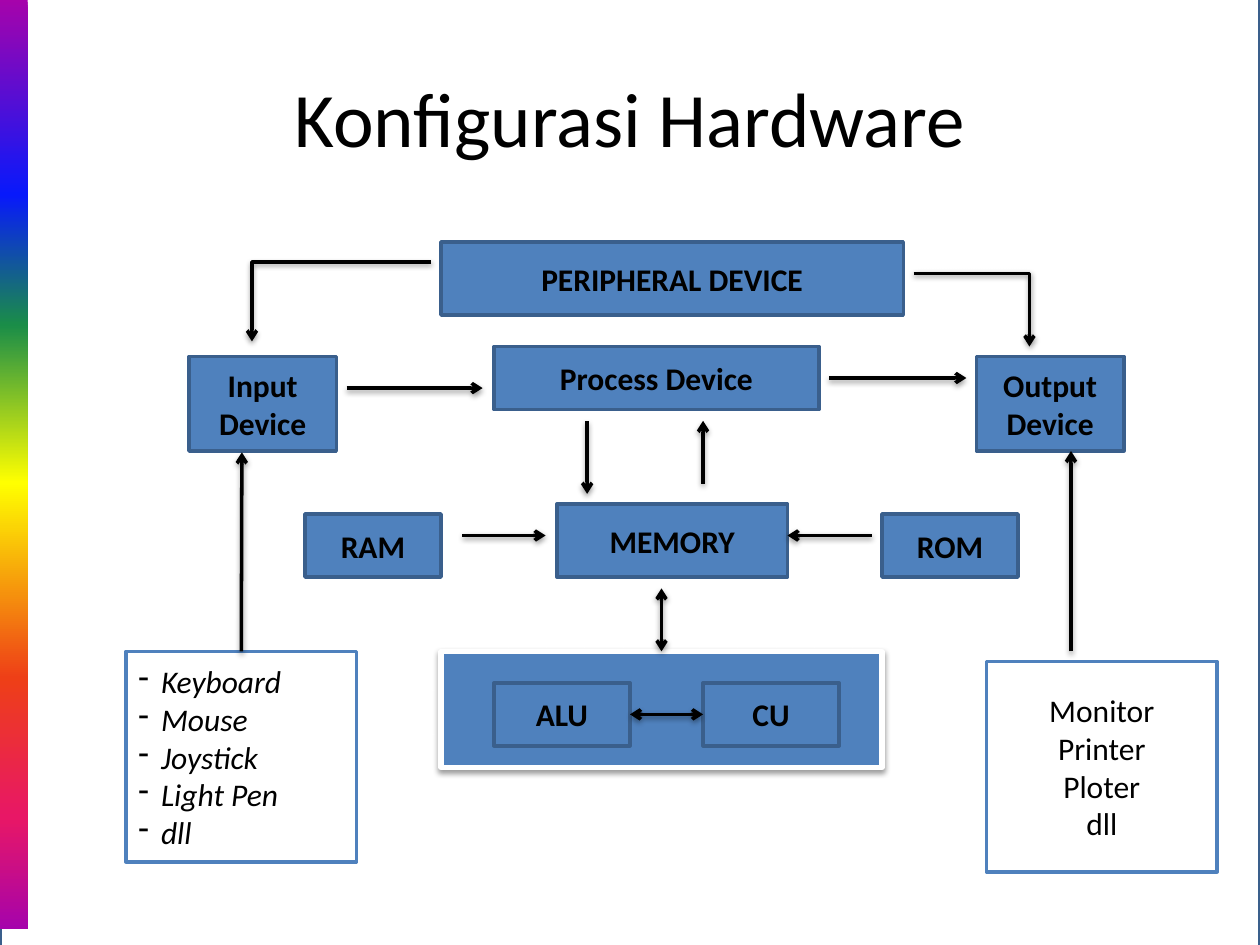
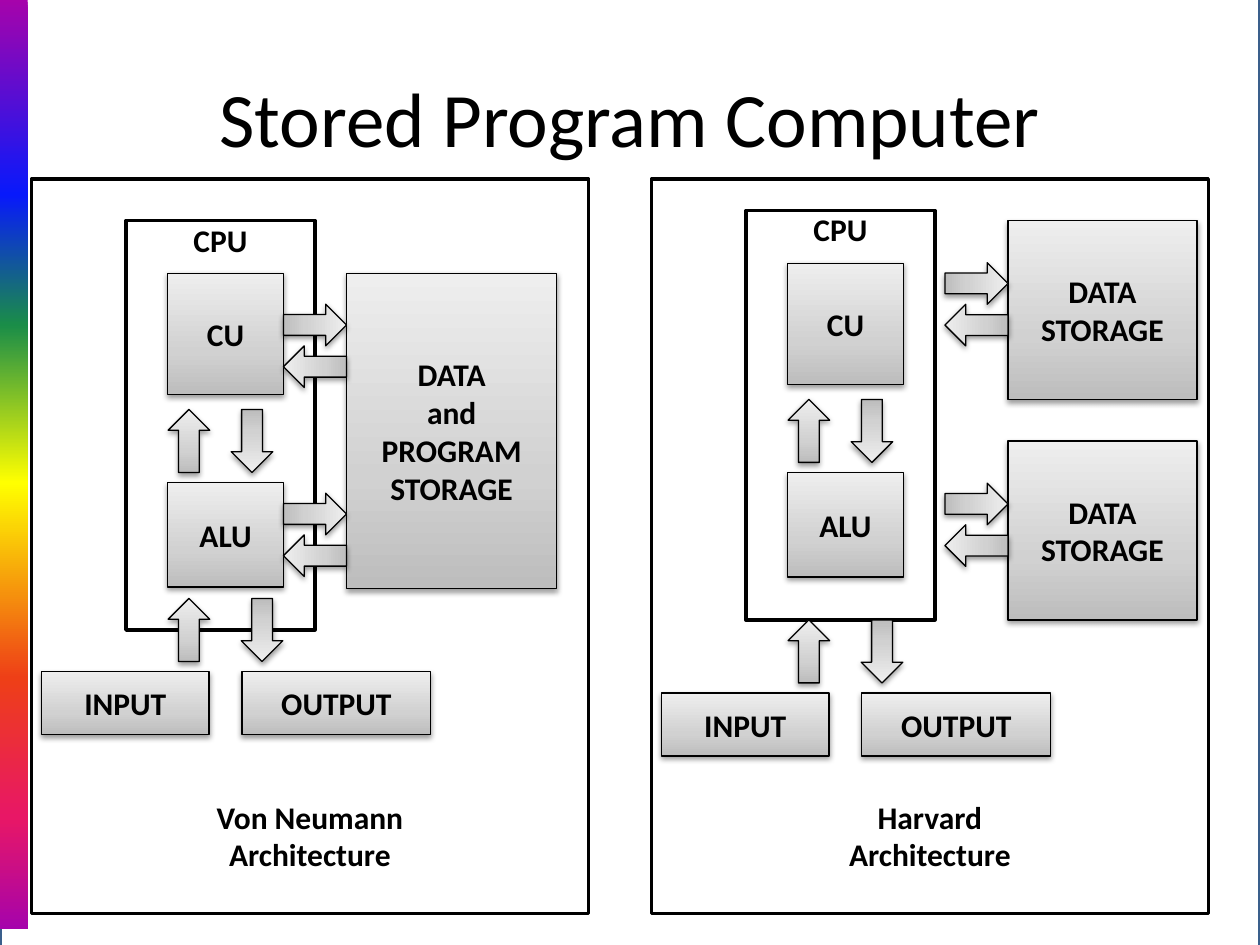
import lxml.etree
import pptx
import pptx.dml.color
import pptx.enum.shapes
import pptx.enum.text
import pptx.oxml.ns
import pptx.util

Inches = pptx.util.Inches
Pt = pptx.util.Pt
RGBColor = pptx.dml.color.RGBColor
ShapeType = pptx.enum.shapes.MSO_SHAPE
ConnectorType = pptx.enum.shapes.MSO_CONNECTOR
Align = pptx.enum.text.PP_ALIGN
Anchor = pptx.enum.text.MSO_ANCHOR

BLACK = RGBColor(0x00, 0x00, 0x00)
WHITE = RGBColor(0xFF, 0xFF, 0xFF)
BLUE = RGBColor(0x4F, 0x81, 0xBD)
DARK_BLUE = RGBColor(0x3A, 0x5F, 0x8C)
RAINBOW = [
    (0, RGBColor(0xA6, 0x03, 0xAB)),
    (21, RGBColor(0x08, 0x19, 0xFB)),
    (35, RGBColor(0x1A, 0x8D, 0x48)),
    (52, RGBColor(0xFF, 0xFF, 0x00)),
    (73, RGBColor(0xEE, 0x3F, 0x17)),
    (88, RGBColor(0xE8, 0x17, 0x66)),
    (100, RGBColor(0xA6, 0x03, 0xAB)),
]
SILVER = [
    (0, RGBColor(0xBD, 0xBD, 0xBD)),
    (35, RGBColor(0xD1, 0xD1, 0xD1)),
    (100, RGBColor(0xEE, 0xEE, 0xEE)),
]
FONT = "Calibri"
TITLE_ONLY = 5
ARROW_WIDTH, ARROW_LENGTH = 0.33, 0.5
BULLET_INDENT = Inches(0.18)


def add_element(parent, tag, **attributes):
    return lxml.etree.SubElement(parent, pptx.oxml.ns.qn(tag), attributes)


def add_shadow(shape):
    effects = add_element(shape.element.spPr, "a:effectLst")
    shadow = add_element(effects, "a:outerShdw", blurRad="40000", dist="20000",
                         dir="5400000", rotWithShape="0")
    color = add_element(shadow, "a:srgbClr", val=str(BLACK))
    add_element(color, "a:alpha", val="38000")


def fill_gradient(shape, stops, angle):
    shape.fill.gradient()
    shape.fill.gradient_angle = angle
    stop_list = shape.element.xpath(".//a:gsLst")[0]
    for stop in list(stop_list):
        stop_list.remove(stop)
    for position, color in stops:
        stop = add_element(stop_list, "a:gs", pos=str(position * 1000))
        add_element(stop, "a:srgbClr", val=str(color))


def write_text(shape, text, size=18, bold=False, italic=False,
               align=Align.CENTER, anchor=Anchor.MIDDLE, bullet=None):
    frame = shape.text_frame
    frame.word_wrap = True
    frame.vertical_anchor = anchor
    frame.text = text
    for paragraph in frame.paragraphs:
        paragraph.alignment = align
        if bullet:
            properties = paragraph._p.get_or_add_pPr()
            properties.set("marL", str(BULLET_INDENT))
            properties.set("indent", str(-BULLET_INDENT))
            add_element(properties, "a:buChar", char=bullet)
        paragraph.font.name = FONT
        paragraph.font.size = Pt(size)
        paragraph.font.bold = bold
        paragraph.font.italic = italic
        paragraph.font.color.rgb = BLACK


def add_box(slide, left, top, width, height, fill=BLUE, line=DARK_BLUE,
            line_width=2, kind=ShapeType.RECTANGLE):
    shape = slide.shapes.add_shape(
        kind, Inches(left), Inches(top), Inches(width), Inches(height))
    shape.shadow.inherit = False
    if fill is not None:
        shape.fill.solid()
        shape.fill.fore_color.rgb = fill
    if line is None:
        shape.line.fill.background()
    else:
        shape.line.color.rgb = line
        shape.line.width = Pt(line_width)
    return shape


def add_silver(slide, left, top, width, height, kind=ShapeType.RECTANGLE):
    shape = add_box(slide, left, top, width, height, None, BLACK, 0.75, kind)
    fill_gradient(shape, SILVER, 90)
    shape.element.spPr.remove(shape.element.xpath(".//a:effectLst")[0])
    add_shadow(shape)
    return shape


def add_silver_box(slide, left, top, width, height, text):
    write_text(add_silver(slide, left, top, width, height), text, bold=True)


def add_block_arrow(slide, center_x, center_y, rotation):
    arrow = add_silver(slide, center_x - ARROW_WIDTH / 2, center_y - ARROW_LENGTH / 2,
                       ARROW_WIDTH, ARROW_LENGTH, ShapeType.UP_ARROW)
    arrow.rotation = rotation


def add_arrow(slide, start, end, kind=ConnectorType.STRAIGHT, both_ends=False):
    connector = slide.shapes.add_connector(
        kind, *(Inches(value) for value in (*start, *end)))
    connector.line.color.rgb = BLACK
    connector.line.width = Pt(2)
    line = connector.element.xpath(".//a:ln")[0]
    if both_ends:
        add_element(line, "a:headEnd", type="arrow")
    add_element(line, "a:tailEnd", type="arrow")
    add_shadow(connector)
    if kind == ConnectorType.ELBOW:
        connector.element.xpath(".//a:prstGeom")[0].set("prst", "bentConnector2")
    return connector


def decorate_master(presentation, slide):
    backdrop = add_box(slide, 0, -0.11, 10, 7.8, fill=WHITE)
    color = backdrop.element.xpath("./p:spPr/a:solidFill/a:srgbClr")[0]
    add_element(color, "a:alpha", val="96000")
    band = add_box(slide, 0, 0, 0.22, 7.37, fill=None, line=None)
    fill_gradient(band, RAINBOW, 270)
    master_tree = presentation.slide_master.shapes.element
    for index, shape in enumerate((backdrop, band)):
        shape.element.xpath(".//p:cNvPr")[0].set("id", str(100 + index))
        master_tree.insert(2 + index, shape.element)


def add_titled_slide(presentation, title):
    slide = presentation.slides.add_slide(presentation.slide_layouts[TITLE_ONLY])
    placeholder = slide.shapes.title
    placeholder.left, placeholder.top = Inches(0.5), Inches(0.3)
    placeholder.width, placeholder.height = Inches(9), Inches(1.25)
    write_text(placeholder, title, size=44)
    return slide


def draw_hardware(slide, left, top):
    def at(x, y):
        return left + x, top + y

    devices = [
        ("PERIPHERAL DEVICE", 2.5, 0, 3.67, 0.58),
        ("Process Device", 2.92, 0.83, 2.58, 0.5),
        ("Input\nDevice", 0.5, 0.91, 1.17, 0.75),
        ("Output\nDevice", 6.75, 0.91, 1.17, 0.75),
        ("MEMORY", 3.42, 2.08, 1.83, 0.58),
        ("RAM", 1.42, 2.16, 1.08, 0.5),
        ("ROM", 6, 2.16, 1.08, 0.5),
    ]
    for text, x, y, width, height in devices:
        write_text(add_box(slide, *at(x, y), width, height), text, bold=True)

    processor = add_box(slide, *at(2.5, 3.25), 3.5, 0.92, line=WHITE, line_width=3)
    processor.element.spPr.remove(processor.element.xpath(".//a:effectLst")[0])
    add_shadow(processor)
    alu, cu = (add_box(slide, *at(x, 3.5), 1.08, 0.5) for x in (2.92, 4.58))
    write_text(alu, "ALU", bold=True)
    write_text(cu, "CU", bold=True)

    inputs = add_box(slide, *at(0, 3.25), 1.83, 1.67, WHITE, BLUE)
    write_text(inputs, "Keyboard\nMouse\nJoystick\nLight Pen\ndll",
               italic=True, align=Align.LEFT, bullet="-")
    outputs = add_box(slide, *at(6.83, 3.33), 1.83, 1.67, WHITE, BLUE)
    write_text(outputs, "Monitor\nPrinter\nPloter\ndll")

    add_arrow(slide, at(6.25, 0.25), at(7.17, 0.83), ConnectorType.ELBOW)
    add_arrow(slide, at(2.42, 0.16), at(1, 0.79), ConnectorType.ELBOW)
    free_arrows = [
        ((1.75, 1.16), (2.83, 1.16)),
        ((5.58, 1.08), (6.67, 1.08)),
        ((2.67, 2.33), (3.33, 2.33)),
        ((5.92, 2.33), (5.25, 2.33)),
        ((3.66, 1.42), (3.66, 2)),
        ((4.58, 1.92), (4.58, 1.42)),
        ((7.5, 3.25), (7.5, 1.66)),
    ]
    for start, end in free_arrows:
        add_arrow(slide, at(*start), at(*end))

    memory_link = add_arrow(slide, at(4.25, 3.25), at(4.25, 2.75), both_ends=True)
    memory_link.begin_connect(processor, 0)
    unit_link = add_arrow(slide, at(4, 3.75), at(4.58, 3.75), both_ends=True)
    unit_link.begin_connect(alu, 3)
    unit_link.end_connect(cu, 1)
    input_link = add_arrow(slide, at(0.92, 3.25), at(0.92, 1.67))
    input_link.begin_connect(inputs, 0)


def draw_storage(slide, left, top, width, height, text, arrow_rows):
    add_silver_box(slide, left, top, width, height, text)
    for row in arrow_rows:
        center_x, center_y = left - ARROW_LENGTH / 2, top + row
        add_block_arrow(slide, center_x, center_y, 90)
        add_block_arrow(slide, center_x, center_y + ARROW_WIDTH, 270)


def draw_architecture(slide, left, top, name, cpu_offset, ports_offset, storages):
    frame = add_box(slide, left, top, 4.42, 5.83, WHITE, BLACK)
    write_text(frame, f"{name}\nArchitecture", bold=True, anchor=Anchor.BOTTOM)
    frame.text_frame.margin_bottom = Inches(0.32)

    cpu_left, cpu_top = left + 0.75, top + cpu_offset
    cpu = add_box(slide, cpu_left, cpu_top, 1.5, 3.25, WHITE, BLACK)
    write_text(cpu, "CPU", bold=True, anchor=Anchor.TOP)
    cpu.text_frame.margin_top = 0

    for text, offset, height in (("CU", 0.42, 0.96), ("ALU", 2.08, 0.83)):
        add_silver_box(slide, cpu_left + 0.33, cpu_top + offset, 0.92, height, text)
    ports_top = cpu_top + ports_offset
    for arrows_top, down_x in ((cpu_top + 1.5, 1), (ports_top, 1.08)):
        center_y = arrows_top + ARROW_LENGTH / 2
        add_block_arrow(slide, cpu_left + 0.5, center_y, 0)
        add_block_arrow(slide, cpu_left + down_x, center_y, 180)
    for text, offset, width in (("INPUT", 0.08, 1.33), ("OUTPUT", 1.67, 1.5)):
        add_silver_box(slide, left + offset, ports_top + 0.58, width, 0.5, text)

    for x, y, width, height, text, arrow_rows in storages:
        draw_storage(slide, left + x, top + y, width, height, text, arrow_rows)


def main():
    presentation = pptx.Presentation()
    presentation.slide_width, presentation.slide_height = Inches(10), Inches(7.5)

    hardware = add_titled_slide(presentation, "Konfigurasi Hardware")
    decorate_master(presentation, hardware)
    draw_hardware(hardware, 1, 1.92)

    computer = add_titled_slide(presentation, "Stored Program Computer")
    shared_storage = [(2.5, 0.75, 1.67, 2.5, "DATA\nand\nPROGRAM\nSTORAGE", (0.41, 1.91))]
    split_storage = [(2.83, y, 1.5, 1.42, "DATA\nSTORAGE", (0.5,)) for y in (0.33, 2.08)]
    draw_architecture(computer, 0.25, 1.42, "Von Neumann", 0.33, 3, shared_storage)
    draw_architecture(computer, 5.17, 1.42, "Harvard", 0.25, 3.25, split_storage)

    presentation.save("out.pptx")


if __name__ == "__main__":
    main()
